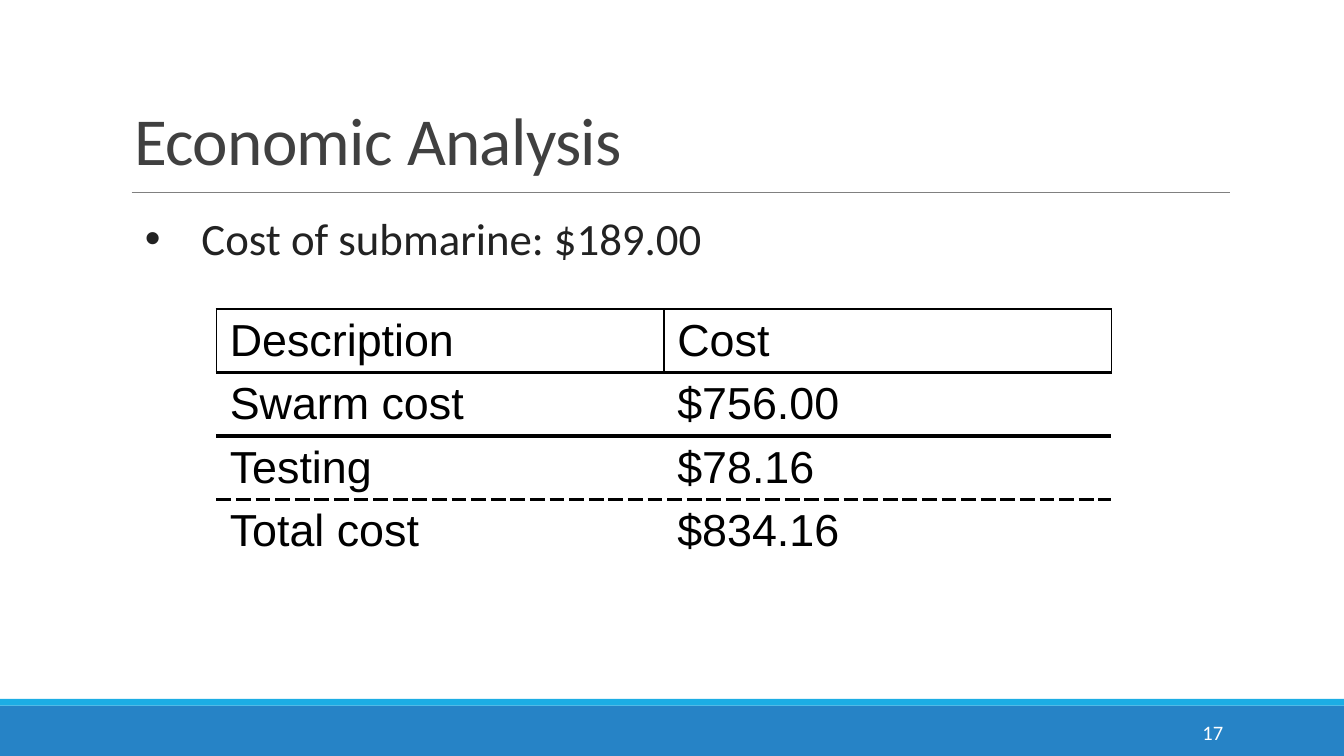
from dataclasses import dataclass

from lxml import etree
from pptx import Presentation
from pptx.dml.color import RGBColor
from pptx.enum.shapes import MSO_CONNECTOR, MSO_SHAPE
from pptx.enum.text import MSO_ANCHOR, MSO_AUTO_SIZE, PP_ALIGN
from pptx.oxml.ns import qn
from pptx.util import Inches, Pt

RECT = MSO_SHAPE.RECTANGLE
STRAIGHT = MSO_CONNECTOR.STRAIGHT
TOP, MIDDLE, BOTTOM = MSO_ANCHOR.TOP, MSO_ANCHOR.MIDDLE, MSO_ANCHOR.BOTTOM
LEFT, RIGHT = PP_ALIGN.LEFT, PP_ALIGN.RIGHT
NO_FIT = MSO_AUTO_SIZE.NONE


@dataclass(frozen=True)
class Theme:
    font: str = "Calibri"
    table_font: str = "Arial"
    title: str = "404040"
    body: str = "222222"
    ink: str = "000000"
    white: str = "FFFFFF"
    rule: str = "808080"
    footer: str = "2683C6"
    accent: str = "1CADE4"
    title_size: float = 36
    body_size: float = 24
    number_size: float = 11


@dataclass(frozen=True)
class Bar:
    top: float
    height: float
    color: str


@dataclass(frozen=True)
class Edge:
    width: float
    dash: str = "solid"


THEME = Theme()
BARS = (Bar(5.25, 0.38, THEME.footer), Bar(5.2, 0.05, THEME.accent))
COSTS = (
    ("Description", "Cost"),
    ("Swarm cost", "$756.00"),
    ("Testing", "$78.16"),
    ("Total cost", "$834.16"),
)
THIN, THICK, DASHED = Edge(1), Edge(2.25), Edge(2.25, "sysDash")
# Horizontal rules from the top of the table to its bottom
RULES = (THIN, THICK, THICK, DASHED, None)
COL_WIDTH, ROW_HEIGHT = 3.33, 0.47


def style(para, font: str, size: float, color: str) -> None:
    for run in para.runs:
        run.font.name = font
        run.font.size = Pt(size)
        run.font.bold = False
        run.font.color.rgb = RGBColor.from_string(color)


def place(shape, left: float, top: float, width: float, height: float) -> None:
    shape.left, shape.top = Inches(left), Inches(top)
    shape.width, shape.height = Inches(width), Inches(height)


def write(shape, text: str, size: float, color: str, anchor, align, inset: float = 0.1):
    frame = shape.text_frame
    frame.text = text
    frame.word_wrap = True
    frame.auto_size = NO_FIT
    frame.vertical_anchor = anchor
    frame.margin_left = frame.margin_right = Inches(0.1)
    frame.margin_top = frame.margin_bottom = Inches(inset)
    para = frame.paragraphs[0]
    para.alignment = align
    style(para, THEME.font, size, color)
    return para


def add_bar(slide, bar: Bar) -> None:
    shape = slide.shapes.add_shape(
        RECT, 0, Inches(bar.top), Inches(10), Inches(bar.height))
    shape.shadow.inherit = False
    shape.fill.solid()
    shape.fill.fore_color.rgb = RGBColor.from_string(bar.color)
    shape.line.fill.background()


def add_rule(slide) -> None:
    line = slide.shapes.add_connector(
        STRAIGHT, Inches(0.98), Inches(1.43), Inches(9.15), Inches(1.43))
    line.line.color.rgb = RGBColor.from_string(THEME.rule)
    line.line.width = Pt(0.5)
    etree.SubElement(line._element.spPr, qn("a:effectLst"))


def add_title(slide) -> None:
    title = slide.shapes.title
    place(title, 0.9, 0.24, 8.25, 1.19)
    para = write(title, "Economic Analysis", THEME.title_size, THEME.title, BOTTOM, LEFT)
    para.line_spacing = 0.85
    para.runs[0].font._element.set("spc", "-38")


def add_bullet(slide) -> None:
    box = slide.shapes.add_textbox(
        Inches(0.9), Inches(1.43), Inches(5.08), Inches(0.74))
    para = write(box, "Cost of submarine: $189.00", THEME.body_size, THEME.body, TOP, LEFT)
    para.line_spacing = 1.1
    props = para._p.get_or_add_pPr()
    props.set("marL", str(Inches(0.5)))
    props.set("indent", str(Inches(-0.42)))
    color = etree.SubElement(props, qn("a:buClr"))
    etree.SubElement(color, qn("a:srgbClr"), val=THEME.body)
    etree.SubElement(props, qn("a:buFont"), typeface=THEME.table_font)
    etree.SubElement(props, qn("a:buChar"), char="•")


def add_number(slide) -> None:
    box = slide.shapes.add_textbox(
        Inches(8.12), Inches(5.3), Inches(1.08), Inches(0.3))
    write(box, "17", THEME.number_size, THEME.white, MIDDLE, RIGHT, 0.05)


def set_edge(cell, side: str, edge: Edge | None) -> None:
    """Draw one cell border; None hides the border of the table style."""
    props = cell._tc.get_or_add_tcPr()
    line = etree.SubElement(props, qn(f"a:ln{side}"))
    if edge is None:
        line.set("w", "0")
        etree.SubElement(line, qn("a:noFill"))
        return
    line.set("w", str(Pt(edge.width)))
    fill = etree.SubElement(line, qn("a:solidFill"))
    etree.SubElement(fill, qn("a:srgbClr"), val=THEME.ink)
    etree.SubElement(line, qn("a:prstDash"), val=edge.dash)


def add_costs(slide) -> None:
    rows, cols = len(COSTS), len(COSTS[0])
    table = slide.shapes.add_table(
        rows, cols, Inches(1.61), Inches(2.3),
        Inches(cols * COL_WIDTH), Inches(rows * ROW_HEIGHT)).table
    table.first_row = table.horz_banding = False
    for col in table.columns:
        col.width = Inches(COL_WIDTH)
    for r, values in enumerate(COSTS):
        table.rows[r].height = Inches(ROW_HEIGHT)
        side = THIN if r == 0 else None
        for c, value in enumerate(values):
            cell = table.cell(r, c)
            cell.text = value
            style(cell.text_frame.paragraphs[0],
                  THEME.table_font, THEME.body_size, THEME.ink)
            edges = {"L": side, "R": side, "T": RULES[r], "B": RULES[r + 1]}
            for name, edge in edges.items():
                set_edge(cell, name, edge)
            cell.fill.background()


def main() -> None:
    deck = Presentation()
    deck.slide_width = Inches(10)
    deck.slide_height = Inches(10) * 9 // 16
    slide = deck.slides.add_slide(deck.slide_layouts[5])
    for bar in BARS:
        add_bar(slide, bar)
    add_rule(slide)
    add_title(slide)
    add_bullet(slide)
    add_number(slide)
    add_costs(slide)
    deck.save("out.pptx")


if __name__ == "__main__":
    main()
